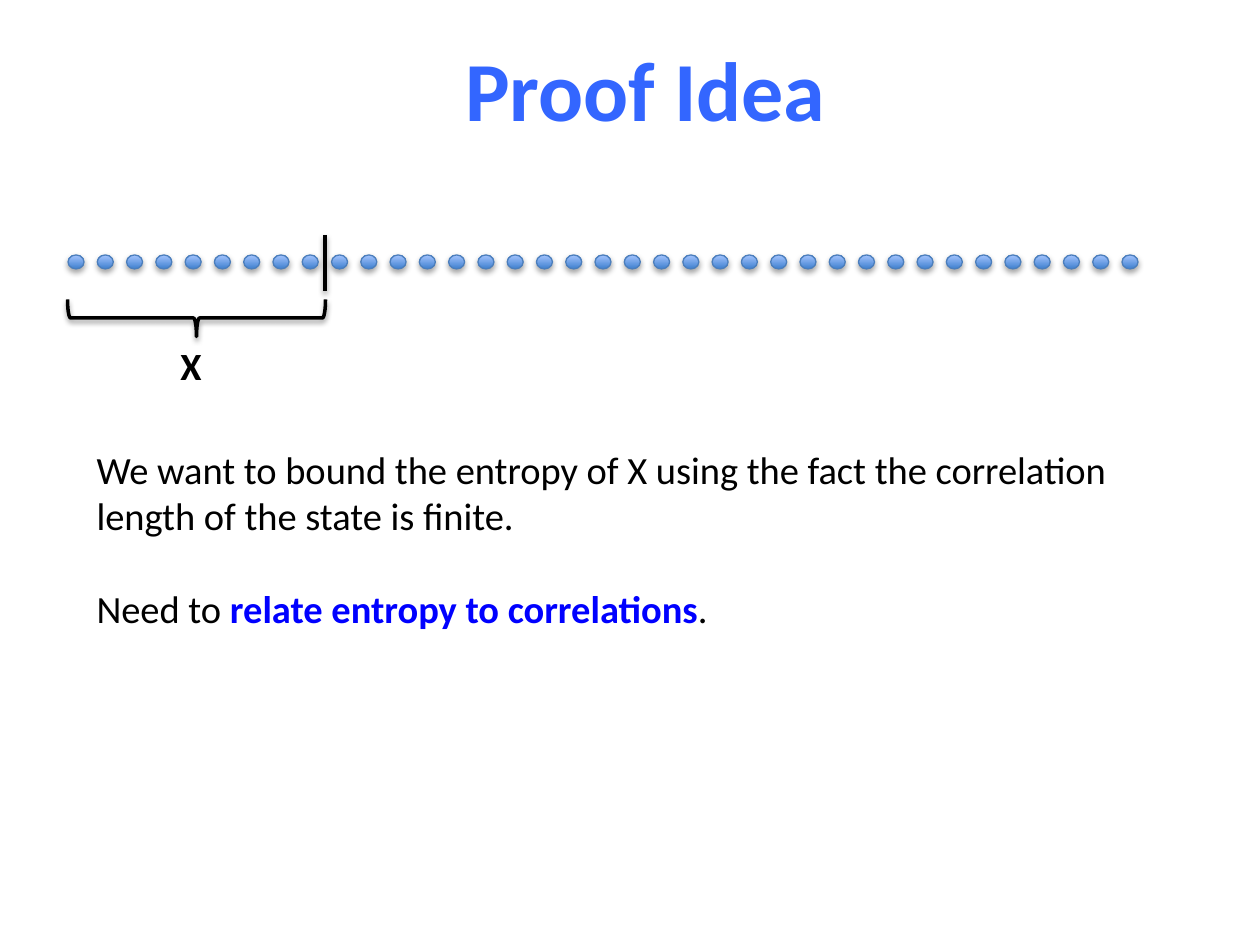
from lxml import etree
from pptx import Presentation
from pptx.dml.color import RGBColor
from pptx.enum.shapes import MSO_CONNECTOR, MSO_SHAPE
from pptx.enum.text import MSO_ANCHOR, MSO_AUTO_SIZE, PP_ALIGN
from pptx.oxml import parse_xml
from pptx.oxml.ns import nsdecls, qn
from pptx.util import Pt

ELLIPSE, LEFT_BRACE = MSO_SHAPE.OVAL, MSO_SHAPE.LEFT_BRACE
STRAIGHT = MSO_CONNECTOR.STRAIGHT
MIDDLE, TOP = MSO_ANCHOR.MIDDLE, MSO_ANCHOR.TOP
CENTER, LEFT = PP_ALIGN.CENTER, PP_ALIGN.LEFT
NO_FIT = MSO_AUTO_SIZE.NONE

EMU_PER_PX = 914400 / 126
BLACK, BLUE, TITLE_BLUE = "000000", "0000FF", "3366FF"


def px(*lengths):
    return [round(length * EMU_PER_PX) for length in lengths]


def color(hex_string):
    return RGBColor.from_string(hex_string)


deck = Presentation()
deck.slide_width, deck.slide_height = px(1260, 945)
slide = deck.slides.add_slide(deck.slide_layouts[1])

# Chain of sites
site_count, first_left, last_left = 37, 68, 1122
step = (last_left - first_left) / (site_count - 1)
shadowed = []
for index in range(site_count):
    site = slide.shapes.add_shape(ELLIPSE, *px(first_left + index * step, 255, 16, 14))
    site.fill.gradient()
    site.fill.gradient_angle = 90
    for stop, shade in zip(site.fill.gradient_stops, ("3F80CE", "A4C4FF")):
        stop.color.rgb = color(shade)
    site.line.color.rgb = color("4B7EBC")
    site.line.width = Pt(0.75)
    shadowed.append((site, 35))

# Cut and brace that mark region X
cut = slide.shapes.add_connector(STRAIGHT, *px(325, 235, 325, 291))
brace = slide.shapes.add_shape(LEFT_BRACE, *px(178, 189, 37, 258))
brace.rotation = 270
brace.fill.background()
for mark in (cut, brace):
    mark.line.color.rgb = color(BLACK)
    mark.line.width = Pt(2)
    shadowed.append((mark, 38))

for shape, opacity in shadowed:
    effects = etree.SubElement(shape.element.spPr, qn("a:effectLst"))
    effects.append(parse_xml(
        f'<a:outerShdw {nsdecls("a")} blurRad="40000" dist="22000" dir="5400000" rotWithShape="0">'
        f'<a:srgbClr val="000000"><a:alpha val="{opacity * 1000}"/></a:srgbClr></a:outerShdw>'))

# Text: box, place, anchor, alignment, size, paragraphs of (text, colour, bold)
title, body = slide.shapes.title, slide.placeholders[1]
label = slide.shapes.add_textbox(*px(168, 336, 57, 59))
texts = [
    (title, (21, -33, 1249, 241), MIDDLE, CENTER, 48, [[("Proof Idea", TITLE_BLUE, True)]]),
    (label, (168, 336, 57, 59), TOP, LEFT, 22, [[("X", BLACK, True)]]),
    (body, (84, 440, 1053, 199), TOP, LEFT, 22, [
        [("We want to bound the entropy of X using the fact the correlation "
          "length of the state is finite.", BLACK, False)],
        [("Need to ", BLACK, False),
         ("relate entropy to correlations", BLUE, True),
         (".", BLACK, False)],
    ]),
]
for box, place, anchor, alignment, size, paragraphs in texts:
    box.left, box.top, box.width, box.height = px(*place)
    frame = box.text_frame
    frame.word_wrap = True
    frame.auto_size = NO_FIT
    frame.vertical_anchor = anchor
    for index, spans in enumerate(paragraphs):
        para = frame.add_paragraph() if index else frame.paragraphs[0]
        para.alignment = alignment
        para.space_before = Pt(26.5 if index else 0)
        for text, shade, bold in spans:
            span = para.add_run()
            span.text = text
            span.font.name = "Calibri"
            span.font.size = Pt(size)
            span.font.bold = bold
            span.font.color.rgb = color(shade)

for para in body.text_frame.paragraphs:
    properties = para._p.get_or_add_pPr()
    properties.set("marL", "0")
    properties.set("indent", "0")
    etree.SubElement(properties, qn("a:buNone"))

deck.save("out.pptx")
